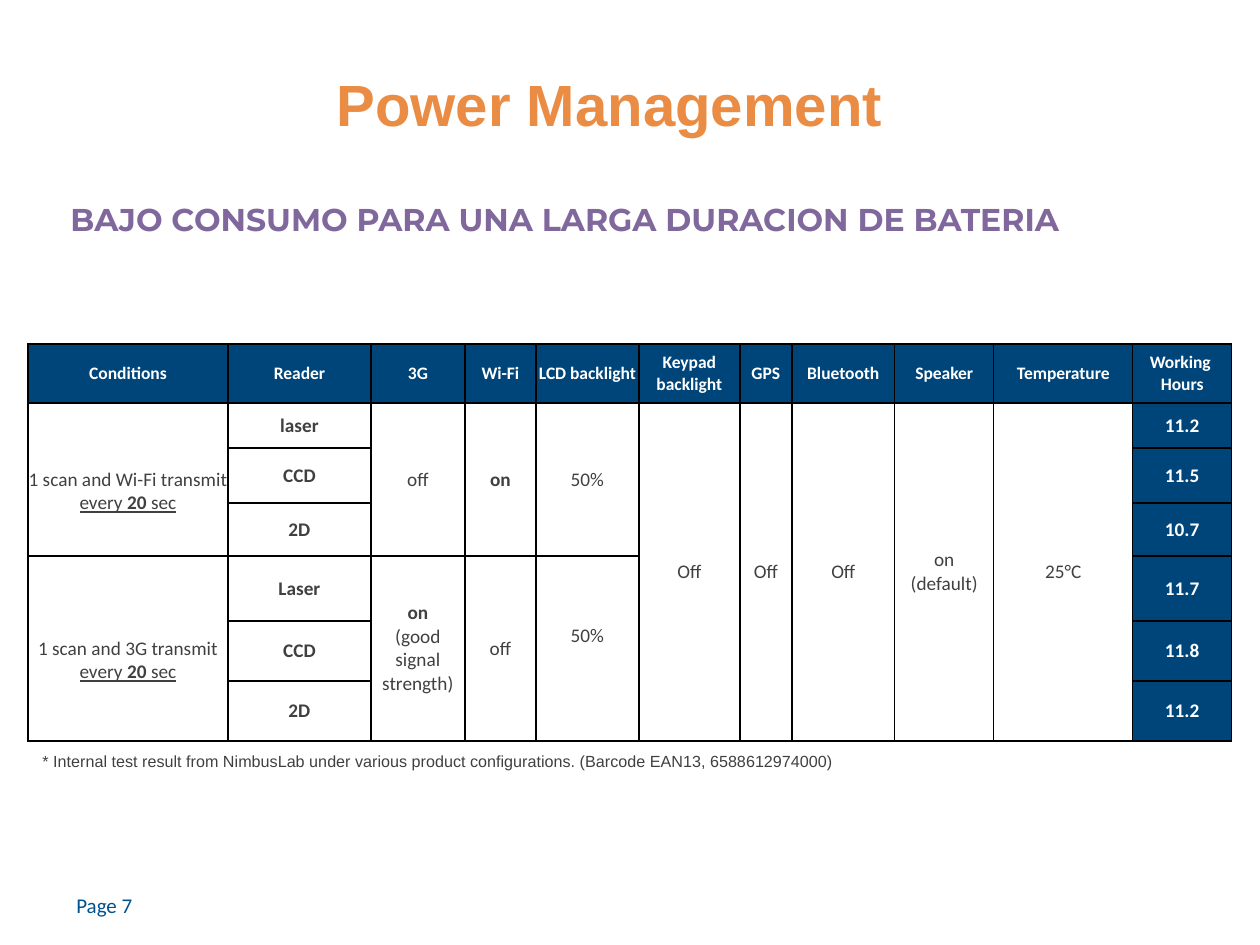
from lxml.etree import SubElement as Sub
from pptx import Presentation as Deck
from pptx.dml.color import RGBColor as Rgb
from pptx.enum.text import MSO_ANCHOR as Anchor, PP_ALIGN as Align
from pptx.oxml.ns import qn
from pptx.util import Pt

SCALE = 914400 // 126
ORANGE = Rgb(0xEA, 0x8C, 0x43)
PURPLE = Rgb(0x80, 0x68, 0x9D)
NAVY = Rgb(0x00, 0x45, 0x79)
BLUE = Rgb(0x00, 0x51, 0x8E)
GREY = Rgb(0x40, 0x40, 0x40)
WHITE = Rgb(0xFF, 0xFF, 0xFF)
BLACK = Rgb(0x00, 0x00, 0x00)

COLS = [200, 143, 94, 71, 103, 101, 52, 103, 99, 139, 99]
ROWS = [59, 45, 55, 53, 65, 60, 60]
HEADS = ["Conditions", "Reader", "3G", "Wi-Fi", "LCD backlight",
         "Keypad backlight", "GPS", "Bluetooth", "Speaker",
         "Temperature", "Working \nHours"]
READERS = ["laser", "CCD", "2D", "Laser", "CCD", "2D"]
HOURS = ["11.2", "11.5", "10.7", "11.7", "11.8", "11.2"]
PERIOD = [("every ", "u"), ("20", "bu"), (" sec", "u")]
LINE = 24
SPANS = [
    (1, 0, 3, [("1 scan and Wi-Fi transmit ", "")] + PERIOD, {"margin_top": LINE}),
    (1, 2, 3, [("off", "")], {}),
    (1, 3, 3, [("on", "b")], {}),
    (1, 4, 3, [("50%", "")], {}),
    (1, 5, 6, [("Off", "")], {}),
    (1, 6, 6, [("Off", "")], {}),
    (1, 7, 6, [("Off", "")], {}),
    (1, 8, 6, [("on", ""), ("\v", ""), ("(default)", "")], {}),
    (1, 9, 6, [("25°C", "")], {}),
    (4, 0, 3, [("1 scan and 3G transmit ", "")] + PERIOD, {"margin_top": LINE}),
    (4, 2, 3, [("on", "b"), ("\v", ""), ("(good signal strength)", "")], {}),
    (4, 3, 3, [("off", "")], {}),
    (4, 4, 3, [("50%", "")], {"margin_bottom": LINE}),
]


def px(num):
    return num * SCALE


def style(font, name, size, color, **more):
    for key, val in {"name": name, "size": Pt(size), **more}.items():
        setattr(font, key, val)
    font.color.rgb = color


def place(shape, *box):
    for key, val in zip(("left", "top", "width", "height"), box):
        setattr(shape, key, px(val))


def write(frame, text, *face, wrap=True, anchor=Anchor.TOP, **more):
    frame.word_wrap = wrap
    frame.vertical_anchor = anchor
    par = frame.paragraphs[0]
    par.alignment = Align.LEFT
    run = par.add_run()
    run.text = text
    style(run.font, *face, **more)
    return run


def label(slide, box, text, *face, **more):
    shape = slide.shapes.add_textbox(*map(px, box))
    return write(shape.text_frame, text, *face, **more)


def stroke(node, tag, color, width):
    line = Sub(node, qn(tag), w=str(Pt(width)))
    Sub(Sub(line, qn("a:solidFill")), qn("a:srgbClr"), val=str(color))
    return line


def outline(run, color, width):
    props = run.font._element
    props.insert(0, stroke(props, "a:ln", color, width))


def paint(cell, back):
    props = cell._tc.get_or_add_tcPr()
    for side in "LRTB":
        stroke(props, "a:ln" + side, BLACK, 1)
    cell.fill.solid()
    cell.fill.fore_color.rgb = back


def fill(cell, lines, size, color, **gaps):
    base = dict.fromkeys(["margin_left", "margin_right", "margin_top", "margin_bottom"], 0)
    for key, val in {**base, **gaps}.items():
        setattr(cell, key, px(val))
    cell.vertical_anchor = Anchor.MIDDLE
    frame = cell.text_frame
    for idx, runs in enumerate(lines):
        par = frame.add_paragraph() if idx else frame.paragraphs[0]
        par.alignment = Align.CENTER
        for text, marks in runs:
            if text == "\v":
                par.add_line_break()
                continue
            run = par.add_run()
            run.text = text
            style(run.font, "Calibri", size, color,
                  bold="b" in marks, underline="u" in marks)


def grid(slide):
    box = map(px, (28, 344, sum(COLS), sum(ROWS)))
    table = slide.shapes.add_table(len(ROWS), len(COLS), *box).table
    table.first_row = table.horz_banding = False
    for col, wide in zip(table.columns, COLS):
        col.width = px(wide)
    for row, high in zip(table.rows, ROWS):
        row.height = px(high)
    last = len(COLS) - 1
    for row in range(len(ROWS)):
        for col in range(len(COLS)):
            paint(table.cell(row, col), NAVY if row == 0 or col == last else WHITE)
    for col, head in enumerate(HEADS):
        fill(table.cell(0, col), [[(part, "b")] for part in head.split("\n")], 10, WHITE)
    for row, (reader, hour) in enumerate(zip(READERS, HOURS), 1):
        fill(table.cell(row, 1), [[(reader, "b")]], 11, GREY)
        fill(table.cell(row, last), [[(hour, "b")]], 11, WHITE)
    for row, col, span, runs, gaps in SPANS:
        cell = table.cell(row, col)
        cell.merge(table.cell(row + span - 1, col))
        fill(cell, [runs], 11, GREY, **gaps)


def main():
    deck = Deck()
    deck.slide_width, deck.slide_height = px(1260), px(945)
    slide = deck.slides.add_slide(deck.slide_layouts[5])
    title = slide.shapes.title
    place(title, 324, 47, 921, 113)
    write(title.text_frame, "Power Management", "Arial", 33.2, ORANGE,
          anchor=Anchor.MIDDLE, bold=True)
    lead = label(slide, (58, 194, 1063, 50),
                 "BAJO CONSUMO PARA UNA LARGA DURACION DE BATERIA",
                 "Montserrat", 18, PURPLE, wrap=False, bold=True)
    outline(lead, PURPLE, 0.71)
    grid(slide)
    label(slide, (30, 745, 1040, 52),
          "* Internal test result from NimbusLab under various product "
          "configurations. (Barcode EAN13, 6588612974000)", "Arial", 9.2, GREY)
    label(slide, (64, 880, 139, 50), "Page 7", "Calibri", 12, BLUE,
          anchor=Anchor.MIDDLE)
    deck.save("out.pptx")


if __name__ == "__main__":
    main()
